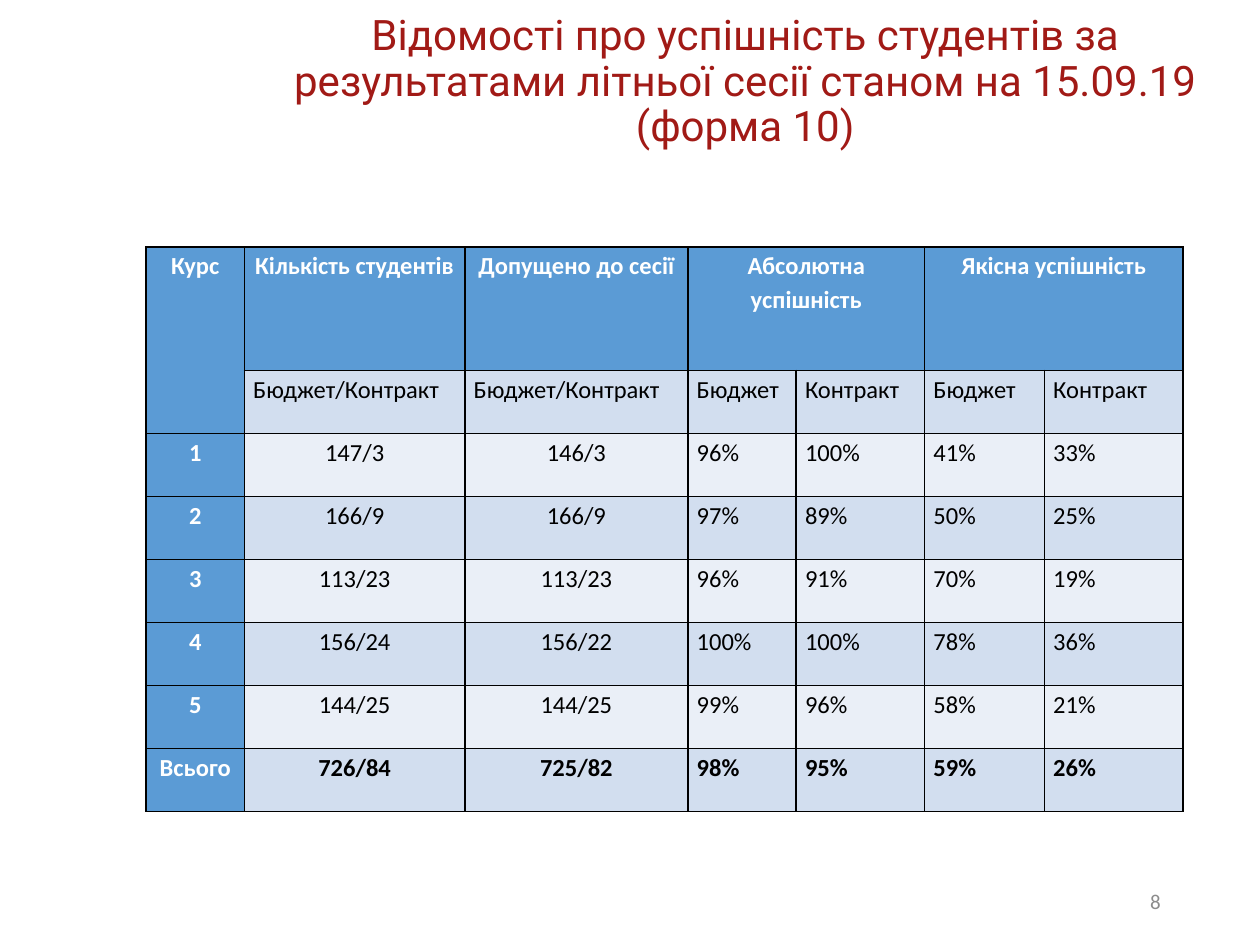
from lxml.etree import SubElement
from pptx import Presentation
from pptx.dml.color import RGBColor
from pptx.enum.text import MSO_ANCHOR, PP_ALIGN
from pptx.oxml.ns import qn
from pptx.util import Pt

PX = 9144

RED = RGBColor(0xA1, 0x1A, 0x16)
GRAY = RGBColor(0x8C, 0x8C, 0x8C)
BLUE = RGBColor(0x5B, 0x9B, 0xD5)
DARK = RGBColor(0xD2, 0xDE, 0xEF)
PALE = RGBColor(0xEA, 0xEF, 0xF7)
WHITE = RGBColor(0xFF, 0xFF, 0xFF)
BLACK = RGBColor(0x00, 0x00, 0x00)

HEAD = {"name": "Roboto", "size": Pt(24), "bold": False}
FOOT = {"name": "Calibri", "size": Pt(12)}
CELL = {"name": "Calibri", "size": Pt(14)}
PADS = {"margin_left": 7 * PX, "margin_right": 7 * PX,
        "margin_top": 0, "margin_bottom": 0}

COLS = [78, 175, 177, 86, 102, 95, 110]
TALL, ROW = 98, 50
SPANS = [(0, 0, 1, 0), (0, 3, 0, 4), (0, 5, 0, 6)]
PAIR = "Бюджет/Контракт"
DATA = [
    ["Курс", "Кількість студентів", "Допущено до сесії",
     "Абсолютна успішність", "", "Якісна успішність", ""],
    ["", PAIR, PAIR, "Бюджет", "Контракт", "Бюджет", "Контракт"],
    ["1", "147/3", "146/3", "96%", "100%", "41%", "33%"],
    ["2", "166/9", "166/9", "97%", "89%", "50%", "25%"],
    ["3", "113/23", "113/23", "96%", "91%", "70%", "19%"],
    ["4", "156/24", "156/22", "100%", "100%", "78%", "36%"],
    ["5", "144/25", "144/25", "99%", "96%", "58%", "21%"],
    ["Всього", "726/84", "725/82", "98%", "95%", "59%", "26%"],
]


def apply(item, style):
    for key, value in style.items():
        setattr(item, key, value)


def write(para, text, style, color, align, pitch):
    apply(para, {"text": text, "alignment": align, "line_spacing": pitch})
    for run in para.runs:
        apply(run.font, style)
        run.font.color.rgb = color
    for gap in para._p.findall(qn("a:br")):
        SubElement(gap, qn("a:rPr"), sz=str(int(style["size"].pt * 100)))


def place(shape, box):
    names = ("left", "top", "width", "height")
    apply(shape, {name: size * PX for name, size in zip(names, box)})


def add_title(slide, box):
    title = slide.shapes.title
    place(title, box)
    frame = title.text_frame
    apply(frame, {"word_wrap": True, "vertical_anchor": MSO_ANCHOR.MIDDLE})
    write(frame.paragraphs[0],
          "Відомості про успішність студентів за результатами літньої сесії "
          "станом на 15.09.19\v(форма 10)",
          HEAD, RED, PP_ALIGN.CENTER, 0.9)


def add_number(slide, box):
    shape = slide.shapes.add_textbox(*[size * PX for size in box])
    frame = shape.text_frame
    apply(frame, {"word_wrap": True, "vertical_anchor": MSO_ANCHOR.MIDDLE})
    write(frame.paragraphs[0], "8", FOOT, GRAY, PP_ALIGN.RIGHT, 1.0)


def add_lines(cell):
    props = cell._tc.get_or_add_tcPr()
    for side in ("lnL", "lnR", "lnT", "lnB"):
        line = SubElement(props, qn("a:" + side), w=str(Pt(1)))
        fill = SubElement(line, qn("a:solidFill"))
        SubElement(fill, qn("a:srgbClr"), val=str(BLACK))


def fill_cell(cell, row, col, text):
    lead = row == 0 or col == 0
    mid = lead or (row > 1 and col < 3)
    add_lines(cell)
    apply(cell, PADS)
    cell.fill.solid()
    cell.fill.fore_color.rgb = BLUE if lead else DARK if row % 2 else PALE
    if text:
        bold = lead or row == len(DATA) - 1
        write(cell.text_frame.paragraphs[0], text, {**CELL, "bold": bold},
              WHITE if lead else BLACK,
              PP_ALIGN.CENTER if mid else PP_ALIGN.LEFT, 1.15)


def add_grades(slide, left, top):
    rows = [TALL] + [ROW] * (len(DATA) - 1)
    box = (left, top, sum(COLS), sum(rows))
    shape = slide.shapes.add_table(len(rows), len(COLS),
                                   *[size * PX for size in box])
    table = shape.table
    for col, width in zip(table.columns, COLS):
        col.width = width * PX
    for row, height in zip(table.rows, rows):
        row.height = height * PX
    for r1, c1, r2, c2 in SPANS:
        table.cell(r1, c1).merge(table.cell(r2, c2))
    for row, line in enumerate(DATA):
        for col, text in enumerate(line):
            fill_cell(table.cell(row, col), row, col, text)


def main():
    deck = Presentation()
    apply(deck, {"slide_width": 1000 * PX, "slide_height": 750 * PX})
    slide = deck.slides.add_slide(deck.slide_layouts[5])
    add_title(slide, (183, -7, 817, 145))
    add_number(slide, (706, 695, 225, 40))
    add_grades(slide, 116, 196)
    deck.save("out.pptx")


if __name__ == "__main__":
    main()
